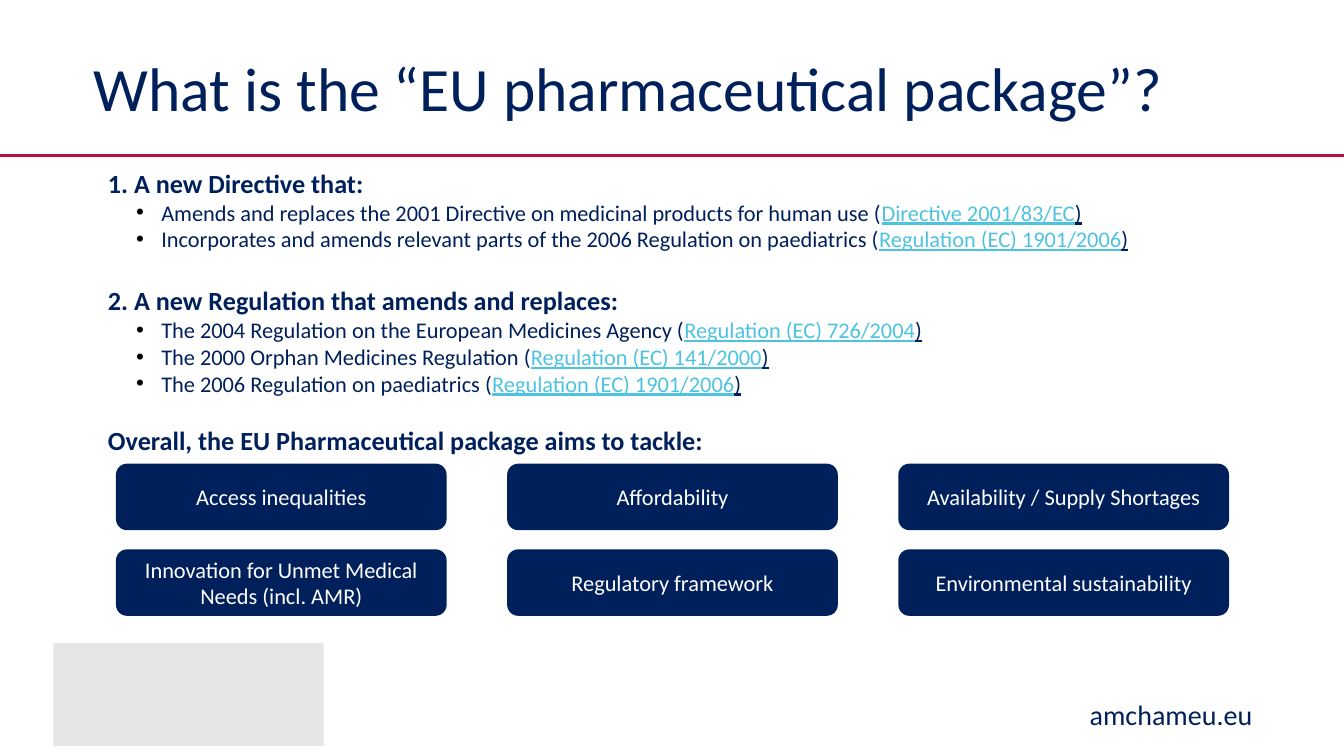
from dataclasses import dataclass

from lxml import etree
from pptx import Presentation
from pptx import util as u
from pptx.dml.color import RGBColor
from pptx.enum import shapes, text
from pptx.oxml.ns import qn

PX = 9144  # EMU per px, 100 px to the inch


@dataclass(frozen=True)
class Theme:
    font: str = "Calibri"
    navy: str = "00205B"
    red: str = "BF0D3E"
    link: str = "4EC3E0"
    white: str = "FFFFFF"
    black: str = "000000"
    grey: str = "E7E6E6"
    title: float = 44
    heading: float = 18.7
    body: float = 16
    footer: float = 20


THEME = Theme()

# Each section: heading, space before it in points, and (text, link) items
SECTIONS = [
    ("1. A new Directive that:", 0, [
        ("Amends and replaces the 2001 Directive on medicinal products for human use (",
         "Directive 2001/83/EC"),
        ("Incorporates and amends relevant parts of the 2006 Regulation on paediatrics (",
         "Regulation (EC) 1901/2006"),
    ]),
    ("2. A new Regulation that amends and replaces:", 23, [
        ("The 2004 Regulation on the European Medicines Agency (", "Regulation (EC) 726/2004"),
        ("The 2000 Orphan Medicines Regulation (", "Regulation (EC) 141/2000"),
        ("The 2006 Regulation on paediatrics (", "Regulation (EC) 1901/2006"),
    ]),
    ("Overall, the EU Pharmaceutical package aims to tackle:", 19.5, []),
]

AIMS = [
    ["Access inequalities", "Affordability", "Availability / Supply Shortages"],
    ["Innovation for Unmet Medical Needs (incl. AMR)", "Regulatory framework",
     "Environmental sustainability"],
]


def px(*lengths):
    return [u.Emu(length * PX) for length in lengths]


def place(shape, *box):
    shape.left, shape.top, shape.width, shape.height = px(*box)


def style(font, size, color=THEME.navy, bold=False, underline=False):
    font.name = THEME.font
    font.size = u.Pt(size)
    font.color.rgb = RGBColor.from_string(color)
    font.bold = bold
    font.underline = underline


def set_bullet(paragraph, char=None, margin=0, indent=0):
    properties = paragraph._p.get_or_add_pPr()
    properties.set("marL", str(margin * PX))
    properties.set("indent", str(indent * PX))
    if char is None:
        etree.SubElement(properties, qn("a:buNone"))
        return
    color = etree.SubElement(properties, qn("a:buClr"))
    etree.SubElement(color, qn("a:srgbClr"), val=THEME.black)
    etree.SubElement(properties, qn("a:buFont"), typeface="Arial")
    etree.SubElement(properties, qn("a:buChar"), char=char)


def add_title(slide, wording):
    title = slide.shapes.title
    place(title, 83, 52, 1102, 78)
    frame = title.text_frame
    frame.text = wording
    frame.auto_size = text.MSO_AUTO_SIZE.NONE
    frame.vertical_anchor = text.MSO_ANCHOR.MIDDLE
    paragraph = frame.paragraphs[0]
    paragraph.alignment = text.PP_ALIGN.LEFT
    paragraph.line_spacing = 0.9
    style(paragraph.runs[0].font, THEME.title)


def add_heading(paragraph, wording, space_before):
    paragraph.text = wording
    set_bullet(paragraph)
    paragraph.space_before = u.Pt(space_before)
    style(paragraph.runs[0].font, THEME.heading, bold=True)


def add_item(paragraph, wording, link):
    set_bullet(paragraph, "•", 53, -25)
    paragraph.space_before = u.Pt(0)
    parts = [(wording, THEME.navy, False), (link, THEME.link, True), (")", THEME.navy, True)]
    for part, color, underline in parts:
        run = paragraph.add_run()
        run.text = part
        style(run.font, THEME.body, color, underline=underline)


def add_sections(slide):
    body = slide.placeholders[1]
    place(body, 97, 161, 1137, 318)
    frame = body.text_frame
    frame.auto_size = text.MSO_AUTO_SIZE.NONE
    frame.vertical_anchor = text.MSO_ANCHOR.TOP
    paragraph = frame.paragraphs[0]
    for index, (heading, space_before, items) in enumerate(SECTIONS):
        if index:
            paragraph = frame.add_paragraph()
        add_heading(paragraph, heading, space_before)
        for wording, link in items:
            add_item(frame.add_paragraph(), wording, link)


def add_block(slide, kind, color, *box):
    block = slide.shapes.add_shape(kind, *px(*box))
    block.shadow.inherit = False
    block.fill.solid()
    block.fill.fore_color.rgb = RGBColor.from_string(color)
    block.line.fill.background()
    return block


def add_aim(slide, wording, left, top):
    aim = add_block(slide, shapes.MSO_SHAPE.ROUNDED_RECTANGLE, THEME.navy, left, top, 328, 66)
    frame = aim.text_frame
    frame.text = wording
    frame.word_wrap = True
    frame.vertical_anchor = text.MSO_ANCHOR.MIDDLE
    paragraph = frame.paragraphs[0]
    paragraph.alignment = text.PP_ALIGN.CENTER
    style(paragraph.runs[0].font, THEME.body, THEME.white)


def add_rule(slide, top, width):
    rule = slide.shapes.add_connector(shapes.MSO_CONNECTOR.STRAIGHT, *px(0, top, width, top))
    rule.line.color.rgb = RGBColor.from_string(THEME.red)
    rule.line.width = u.Pt(2)
    etree.SubElement(rule._element.spPr, qn("a:effectLst"))


def add_footer(slide, wording):
    footer = slide.shapes.add_textbox(*px(982, 687, 270, 44))
    frame = footer.text_frame
    frame.text = wording
    frame.word_wrap = True
    paragraph = frame.paragraphs[0]
    paragraph.alignment = text.PP_ALIGN.RIGHT
    style(paragraph.runs[0].font, THEME.footer)


def main():
    presentation = Presentation()
    presentation.slide_width, presentation.slide_height = px(1333, 750)
    slide = presentation.slides.add_slide(presentation.slide_layouts[1])

    # Title and rule
    add_rule(slide, 154, 1333)
    add_title(slide, "What is the “EU pharmaceutical package”?")

    # Legislation list
    add_sections(slide)

    # Grid of aims
    for row, aims in enumerate(AIMS):
        for column, aim in enumerate(aims):
            add_aim(slide, aim, 115 + 388 * column, 460 + 85 * row)

    # Footer
    add_block(slide, shapes.MSO_SHAPE.RECTANGLE, THEME.grey, 53, 638, 268, 102)
    add_footer(slide, "amchameu.eu")

    presentation.save("out.pptx")


if __name__ == "__main__":
    main()
